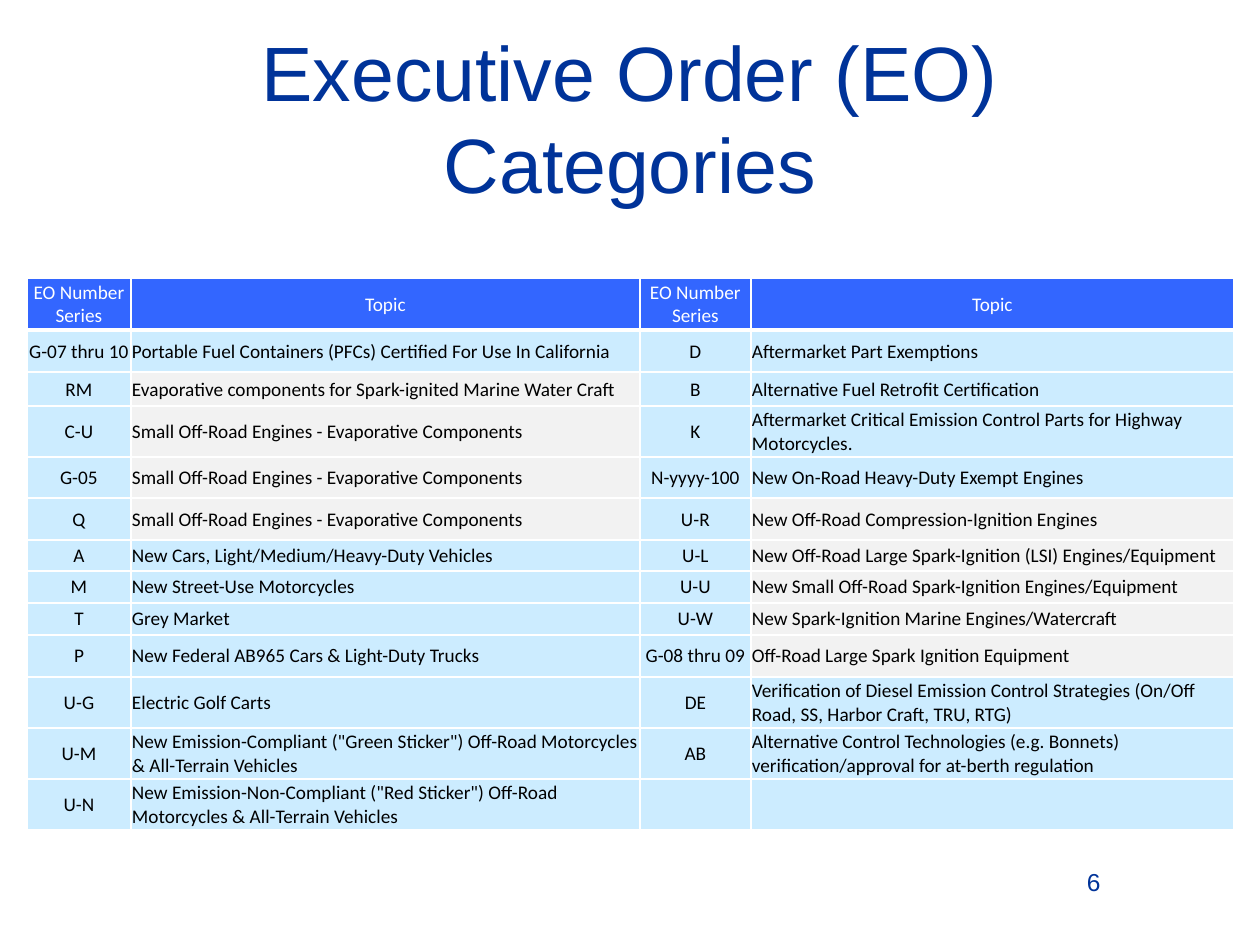
from pptx import Presentation
from pptx import util as u
from pptx.dml.color import RGBColor
from pptx.enum import text
from pptx.oxml.ns import qn
from lxml import etree

PX = u.Inches(1) / 126
NAVY, BLUE, SKY, GREY = "003399", "3366FF", "CCECFF", "F2F2F2"
WHITE, BLACK = "FFFFFF", "000000"
CENTER, LEFT, RIGHT = text.PP_ALIGN.CENTER, text.PP_ALIGN.LEFT, text.PP_ALIGN.RIGHT

COLUMN_WIDTHS = [104, 509, 111, 483]
ROW_HEIGHTS = [52, 42, 34, 51, 41, 42, 31, 32, 32, 42, 51, 51, 51]
GREY_ROWS = {1: range(2, 6), 3: range(5, 10)}
EVAPORATIVE = "Small Off-Road Engines - Evaporative Components"
CATEGORIES = [
    ("EO Number Series", "Topic", "EO Number Series", "Topic"),
    ("G-07 thru 10", "Portable Fuel Containers (PFCs) Certified For Use In California",
     "D", "Aftermarket Part Exemptions"),
    ("RM", "Evaporative components for Spark-ignited Marine Water Craft",
     "B", "Alternative Fuel Retrofit Certification"),
    ("C-U", EVAPORATIVE,
     "K", "Aftermarket Critical Emission Control Parts for Highway Motorcycles."),
    ("G-05", EVAPORATIVE, "N-yyyy-100", "New On-Road Heavy-Duty Exempt Engines"),
    ("Q", EVAPORATIVE, "U-R", "New Off-Road Compression-Ignition Engines"),
    ("A", "New Cars, Light/Medium/Heavy-Duty Vehicles",
     "U-L", "New Off-Road Large Spark-Ignition (LSI) Engines/Equipment"),
    ("M", "New Street-Use Motorcycles",
     "U-U", "New Small Off-Road Spark-Ignition Engines/Equipment"),
    ("T", "Grey Market", "U-W", "New Spark-Ignition Marine Engines/Watercraft"),
    ("P", "New Federal AB965 Cars & Light-Duty Trucks",
     "G-08 thru 09", "Off-Road Large Spark Ignition Equipment"),
    ("U-G", "Electric Golf Carts",
     "DE", "Verification of Diesel Emission Control Strategies (On/Off Road, SS, Harbor Craft, TRU, RTG)"),
    ("U-M", 'New Emission-Compliant ("Green Sticker") Off-Road Motorcycles & All-Terrain Vehicles',
     "AB", "Alternative Control Technologies (e.g. Bonnets) verification/approval for at-berth regulation"),
    ("U-N", 'New Emission-Non-Compliant ("Red Sticker") Off-Road Motorcycles & All-Terrain Vehicles',
     "", ""),
]


def px(length):
    return u.Emu(round(length * PX))


def rgb(color):
    return RGBColor.from_string(color)


def set_all(target, values):
    for key, value in values.items():
        setattr(target, key, value)


def write(frame, wording, font, size, color, align):
    frame.text = wording
    paragraph = frame.paragraphs[0]
    paragraph.alignment = align
    for part in [paragraph, *paragraph.runs]:
        set_all(part.font, {"name": font, "size": u.Pt(size)})
        part.font.color.rgb = rgb(color)


def add_border(cell, side, width):
    line = etree.SubElement(cell._tc.get_or_add_tcPr(), qn(f"a:ln{side}"), w=str(u.Pt(width)))
    fill = etree.SubElement(line, qn("a:solidFill"))
    etree.SubElement(fill, qn("a:srgbClr"), val=WHITE)


def format_cell(cell, row, column, wording):
    header = row == 0
    set_all(cell, {"margin_left": px(1), "margin_right": px(1), "margin_top": px(1),
                   "margin_bottom": 0, "vertical_anchor": text.MSO_ANCHOR.MIDDLE})
    below_header = row == 1
    for side, width in {"L": 1, "R": 1, "T": 3 if below_header else 1, "B": 3 if header else 1}.items():
        add_border(cell, side, width)
    cell.fill.solid()
    body = GREY if row in GREY_ROWS.get(column, ()) else SKY
    cell.fill.fore_color.rgb = rgb(BLUE if header else body)
    align = CENTER if header or column % 2 == 0 else LEFT
    write(cell.text_frame, wording, "Calibri", 11, WHITE if header else BLACK, align)


def add_title(slide):
    title = slide.shapes.title
    set_all(title, {"left": px(63), "top": px(38), "width": px(1134), "height": px(157)})
    set_all(title.text_frame, {"word_wrap": True, "vertical_anchor": text.MSO_ANCHOR.MIDDLE,
                               "auto_size": text.MSO_AUTO_SIZE.NONE})
    write(title.text_frame, "Executive Order (EO) Categories", "Arial", 44, NAVY, CENTER)


def add_category_table(slide):
    table = slide.shapes.add_table(
        len(ROW_HEIGHTS), len(COLUMN_WIDTHS), px(27), px(278),
        px(sum(COLUMN_WIDTHS)), px(sum(ROW_HEIGHTS))).table
    table.horz_banding = False
    for column, width in zip(table.columns, COLUMN_WIDTHS):
        column.width = px(width)
    for row, height in zip(table.rows, ROW_HEIGHTS):
        row.height = px(height)
    for row, entries in enumerate(CATEGORIES):
        for column, wording in enumerate(entries):
            format_cell(table.cell(row, column), row, column, wording)


def add_page_number(slide):
    number = slide.shapes.add_textbox(px(1050), px(861), px(63), px(66)).text_frame
    number.word_wrap = True
    write(number, "6", "Arial", 14, NAVY, RIGHT)


def main():
    deck = Presentation()
    set_all(deck, {"slide_width": px(1260), "slide_height": px(945)})
    slide = deck.slides.add_slide(deck.slide_layouts[5])
    add_title(slide)
    add_category_table(slide)
    add_page_number(slide)
    deck.save("out.pptx")


if __name__ == "__main__":
    main()
